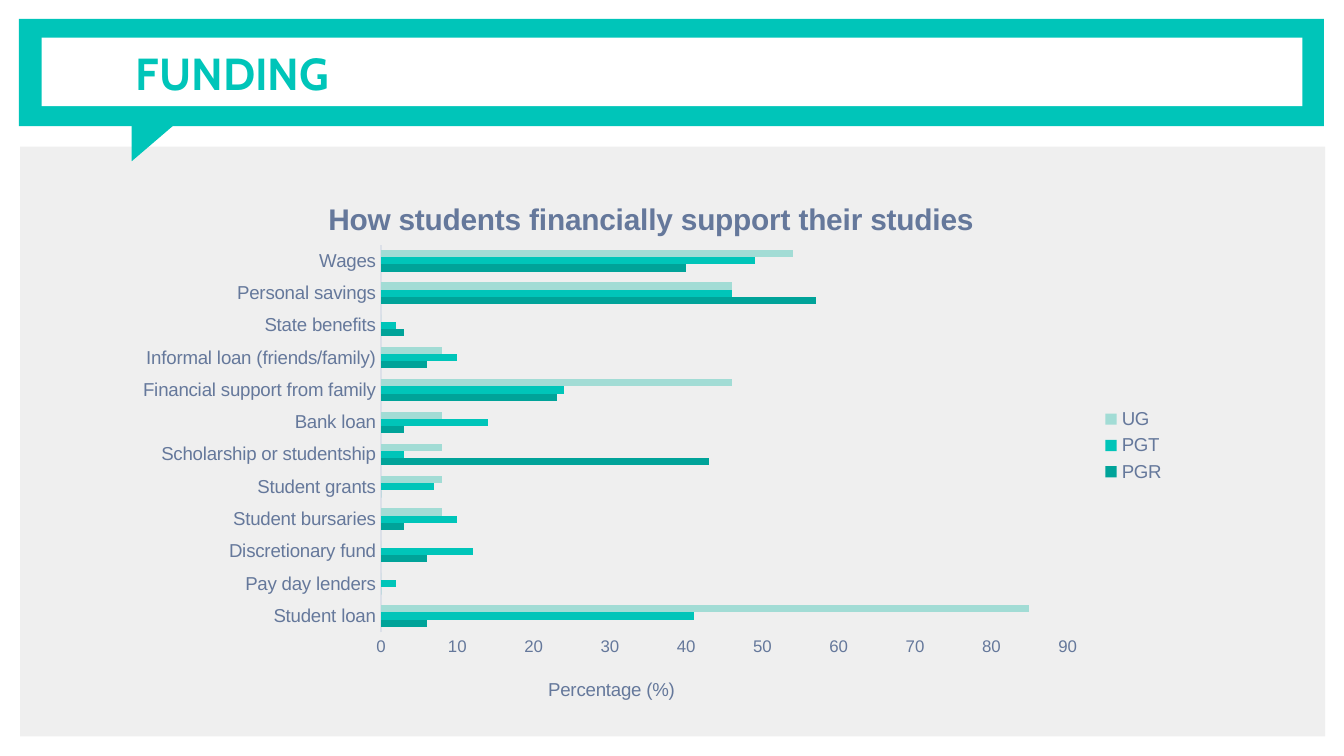
from dataclasses import dataclass

from lxml import etree
from pptx import Presentation
from pptx import util as u
from pptx.chart.data import CategoryChartData
from pptx.dml.color import RGBColor
from pptx.enum import chart as ch, shapes, text
from pptx.oxml.ns import qn


@dataclass(frozen=True)
class Theme:
    teal: str = "00C5B9"
    dark: str = "00A399"
    pale: str = "A2DCD5"
    grey: str = "EFEFEF"
    white: str = "FFFFFF"
    slate: str = "65789B"
    rule: str = "DCE0E8"
    head: str = "Cabin"
    body: str = "Arial"
    title: int = 24
    chart: int = 16
    label: int = 10
    tick: int = 9


THEME = Theme()
CELL = 0.1  # inches per grid column and row
COLS, ROWS = 100, 56.25

GROUPS = ["Student loan", "Pay day lenders", "Discretionary fund",
          "Student bursaries", "Student grants", "Scholarship or studentship",
          "Bank loan", "Financial support from family",
          "Informal loan (friends/family)", "State benefits",
          "Personal savings", "Wages"]
SERIES = [
    ("PGR", THEME.dark, [6, 0, 6, 3, 0, 43, 3, 23, 6, 3, 57, 40]),
    ("PGT", THEME.teal, [41, 2, 12, 10, 7, 3, 14, 24, 10, 2, 46, 49]),
    ("UG", THEME.pale, [85, 0, 0, 8, 8, 8, 8, 46, 8, 0, 46, 54]),
]


def grid(*cells):
    return [u.Inches(n * CELL) for n in cells]


def paint(fill, color):
    fill.solid()
    fill.fore_color.rgb = RGBColor.from_string(color)


def place(node, index, **shares):
    """Pin a chart part at shares of the chart's size."""
    for old in node.findall(qn("c:layout")):
        node.remove(old)
    layout = etree.Element(qn("c:layout"))
    manual = etree.SubElement(layout, qn("c:manualLayout"))
    if "w" in shares:
        etree.SubElement(manual, qn("c:layoutTarget"), val="inner")
    for key in "xy":
        etree.SubElement(manual, qn(f"c:{key}Mode"), val="edge")
    for key, share in shares.items():
        etree.SubElement(manual, qn(f"c:{key}"), val=str(share))
    node.insert(index, layout)


class Deck:
    def __init__(self, theme):
        self.theme = theme
        self.show = Presentation()
        self.show.slide_width, self.show.slide_height = grid(COLS, ROWS)
        self.slide = self.show.slides.add_slide(self.show.slide_layouts[5])

    def style(self, font, size, color, bold=False, face=None):
        font.size = u.Pt(size)
        font.bold = bold
        font.name = face or self.theme.body
        font.color.rgb = RGBColor.from_string(color)

    def block(self, cells, color, kind=shapes.MSO_SHAPE.RECTANGLE, turn=0, home=None):
        shape = (home or self.slide).shapes.add_shape(kind, *grid(*cells))
        shape.shadow.inherit = False
        shape.rotation = turn
        paint(shape.fill, color)
        shape.line.fill.background()

    def banner(self):
        """Draw the title frame with its speech tail."""
        t = self.theme
        group = self.slide.shapes.add_group_shape()
        self.block((1.4, 1.4, 97.1, 8), t.teal, home=group)
        self.block((10.1, 8.1, 3.6, 4.2), t.teal,
                   shapes.MSO_SHAPE.RIGHT_TRIANGLE, 90, group)
        self.block((3.1, 2.8, 93.8, 5.1), t.white, home=group)

    def title(self, words, cells):
        t = self.theme
        title = self.slide.shapes.title
        title.left, title.top, title.width, title.height = grid(*cells)
        frame = title.text_frame
        frame.text = words
        frame.vertical_anchor = text.MSO_ANCHOR.MIDDLE
        frame.margin_left = frame.margin_right = u.Inches(0.1)
        frame.margin_top = frame.margin_bottom = u.Inches(0.1)
        line = frame.paragraphs[0]
        line.alignment = text.PP_ALIGN.LEFT
        self.style(line.runs[0].font, t.title, t.teal, True, t.head)
        title.element.getparent().append(title.element)  # bring to front

    def caption(self, part, words, size, bold, **shares):
        part.text_frame.text = words
        run = part.text_frame.paragraphs[0].runs[0]
        self.style(run.font, size, self.theme.slate, bold)
        place(part.element, 1, **shares)

    def bars(self, cells, heading, unit):
        t = self.theme
        data = CategoryChartData()
        data.categories = GROUPS
        for name, _, values in SERIES:
            data.add_series(name, values)
        chart = self.slide.shapes.add_chart(
            ch.XL_CHART_TYPE.BAR_CLUSTERED, *grid(*cells), data).chart
        self.style(chart.font, t.label, t.slate)
        self.caption(chart.chart_title, heading, t.chart, True, x=0.19, y=0.05)

        plot = chart.plots[0]
        plot.gap_width, plot.overlap = 150, 0
        plot.vary_by_categories = False
        for series, (_, color, _) in zip(plot.series, SERIES):
            paint(series.format.fill, color)
            series.invert_if_negative = False
        place(chart.element.find(".//" + qn("c:plotArea")), 0,
              x=0.245, y=0.14, w=0.65, h=0.695)

        names, scale = chart.category_axis, chart.value_axis
        for axis, size in ((names, t.label), (scale, t.tick)):
            axis.major_tick_mark = axis.minor_tick_mark = ch.XL_TICK_MARK.NONE
            axis.has_major_gridlines = False
            self.style(axis.tick_labels.font, size, t.slate)
        names.format.line.color.rgb = RGBColor.from_string(t.rule)
        names.format.line.width = u.Pt(0.75)
        scale.format.line.fill.background()
        scale.minimum_scale, scale.maximum_scale, scale.major_unit = 0, 90, 10
        self.caption(scale.axis_title, unit, t.label, False, x=0.4, y=0.91)

        chart.has_legend = True
        chart.legend.position = ch.XL_LEGEND_POSITION.RIGHT
        chart.legend.include_in_layout = False
        self.style(chart.legend.font, t.label, t.slate)


def main():
    deck = Deck(THEME)
    deck.block((1.5, 10.9, 97.1, 43.9), THEME.grey)
    deck.banner()
    deck.title("FUNDING", (9.1, 1.4, 87, 8))
    deck.bars((9.1, 12.4, 78.6, 41.5),
              "How students financially support their studies", "Percentage (%)")
    deck.show.save("out.pptx")


if __name__ == "__main__":
    main()
